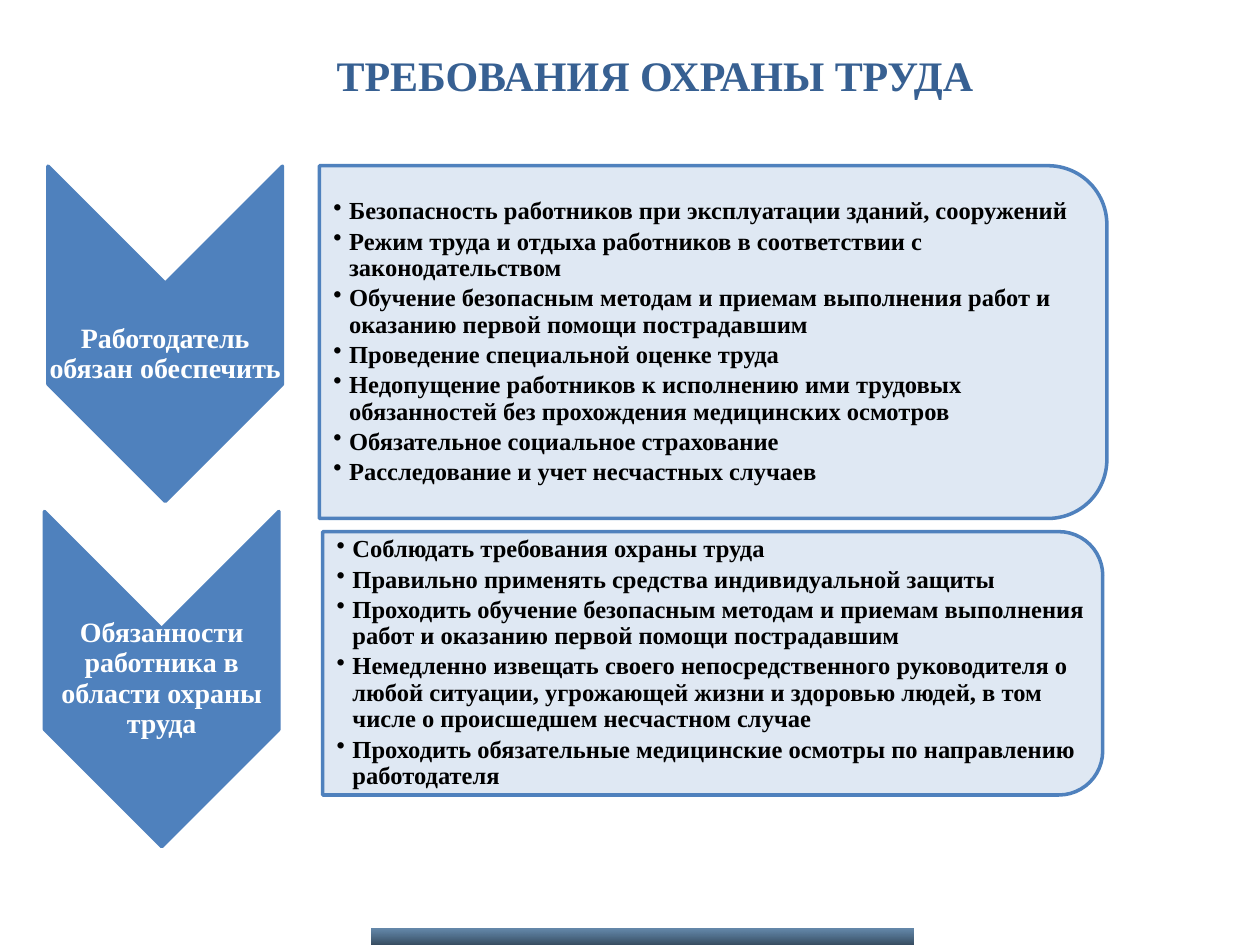
from pptx import Presentation
from pptx.dml.color import RGBColor
from pptx.enum.shapes import MSO_SHAPE
from pptx.enum.text import MSO_ANCHOR, PP_ALIGN
from pptx.oxml import parse_xml
from pptx.oxml.ns import nsdecls, qn
from pptx.util import Pt

BLUE = RGBColor(0x4F, 0x81, 0xBD)
PALE_BLUE = RGBColor(0xDC, 0xE6, 0xF2)
TITLE_BLUE = RGBColor(0x37, 0x60, 0x92)
BAR_TOP = RGBColor(0x00, 0x3C, 0x73)
BAR_BOTTOM = RGBColor(0x00, 0x1C, 0x35)
WHITE = RGBColor(0xFF, 0xFF, 0xFF)
BLACK = RGBColor(0, 0, 0)
FONT = "Times New Roman"
CORNER = 1 / 6  # corner radius as a share of the panel height
CORNER_INSET = 0.29  # share of the radius that keeps text clear of the curve

# Each section: chevron box, its text shift, label, panel box, panel items
SECTIONS = [
    ((27.4, 95, 134, 191.5), 12, "Работодатель обязан обеспечить",
     (182.5, 94.7, 450, 201.6), [
         "Безопасность работников при эксплуатации зданий, сооружений",
         "Режим труда и отдыха работников в соответствии с законодательством",
         "Обучение безопасным методам и приемам выполнения работ и оказанию первой помощи пострадавшим",
         "Проведение специальной оценке труда",
         "Недопущение работников к исполнению ими трудовых обязанностей без прохождения медицинских осмотров",
         "Обязательное социальное страхование",
         "Расследование и учет несчастных случаев"]),
    ((25.4, 292.3, 134, 191.5), 0, "Обязанности работника в области охраны труда",
     (184.4, 303.8, 445.7, 150.5), [
         "Соблюдать требования охраны труда",
         "Правильно применять средства индивидуальной защиты",
         "Проходить обучение безопасным методам и приемам выполнения работ и оказанию первой помощи пострадавшим",
         "Немедленно извещать своего непосредственного руководителя о любой ситуации, угрожающей жизни и здоровью людей, в том числе о происшедшем несчастном случае",
         "Проходить обязательные медицинские осмотры по направлению работодателя"]),
]


def set_alpha(color_element, percent):
    color_element.append(parse_xml(
        f'<a:alpha {nsdecls("a")} val="{percent * 1000}"/>'))


def add_turned_shape(page, kind, box, fill):
    """Add a shape turned a quarter clockwise so that it covers the box."""
    left, top, width, height = box
    shift = (width - height) / 2
    shape = page.shapes.add_shape(
        kind, Pt(left + shift), Pt(top - shift), Pt(height), Pt(width))
    shape.rotation = 90
    shape.shadow.inherit = False
    shape.fill.solid()
    shape.fill.fore_color.rgb = fill
    shape.line.color.rgb = BLUE
    shape.line.width = Pt(2)
    return shape


def add_text(page, box, lines, size, color, margin_left=0.8, align=None,
             spacing=None, after=None, bullets=False):
    frame = page.shapes.add_textbox(*map(Pt, box)).text_frame
    frame.word_wrap = True
    frame.vertical_anchor = MSO_ANCHOR.MIDDLE
    frame.margin_left = Pt(margin_left)
    frame.margin_top = frame.margin_right = frame.margin_bottom = Pt(0.8)
    frame.text = "\n".join(lines)
    for para in frame.paragraphs:
        para.alignment = align
        para.line_spacing = spacing
        if after:
            para.space_after = Pt(after)
        if bullets:
            properties = para._p.get_or_add_pPr()
            properties.set("marL", str(Pt(9)))
            properties.set("indent", str(-Pt(9)))
            properties.append(parse_xml(f'<a:buChar {nsdecls("a")} char="•"/>'))
        for run in para.runs:
            run.font.name = FONT
            run.font.size = Pt(size)
            run.font.bold = True
            run.font.color.rgb = color


def add_chevron(page, box, text_shift, label):
    add_turned_shape(page, MSO_SHAPE.CHEVRON, box, BLUE).adjustments[0] = 0.5
    left, top, width, height = box
    text_box = (left, top + width / 2 + text_shift, width, height - width)
    add_text(page, text_box, [label], 16, WHITE,
             align=PP_ALIGN.CENTER, spacing=0.9, after=5.6)


def add_panel(page, box, items):
    panel = add_turned_shape(page, MSO_SHAPE.ROUND_2_SAME_RECTANGLE, box, PALE_BLUE)
    panel.adjustments[0] = CORNER
    set_alpha(panel._element.spPr.find(qn("a:solidFill"))[0], 90)
    left, top, width, height = box
    inset = height * CORNER * CORNER_INSET
    text_box = (left, top + inset, width - inset, height - 2 * inset)
    add_text(page, text_box, items, 14, BLACK, margin_left=8,
             spacing=0.9, after=2.1, bullets=True)


def add_bottom_bar(page, box):
    bar = page.shapes.add_shape(MSO_SHAPE.RECTANGLE, *map(Pt, box))
    bar.shadow.inherit = False
    bar.line.fill.background()
    bar.fill.gradient()
    bar.fill.gradient_angle = 270
    for stop, color in zip(bar.fill.gradient_stops, (BAR_TOP, BAR_BOTTOM)):
        stop.color.rgb = color
    colors = bar._element.spPr.find(qn("a:gradFill")).iter(qn("a:srgbClr"))
    for color_element, percent in zip(list(colors), (60, 80)):
        set_alpha(color_element, percent)


def main():
    deck = Presentation()
    deck.slide_width, deck.slide_height = Pt(720), Pt(540)
    page = deck.slides.add_slide(deck.slide_layouts[6])
    for chevron_box, text_shift, label, panel_box, items in SECTIONS:
        add_chevron(page, chevron_box, text_shift, label)
        add_panel(page, panel_box, items)
    add_text(page, (105, 15, 538.5, 55.5), ["ТРЕБОВАНИЯ ОХРАНЫ ТРУДА"],
             24, TITLE_BLUE, align=PP_ALIGN.CENTER)
    add_bottom_bar(page, (212.5, 530.5, 309.6, 9.5))
    deck.save("out.pptx")


if __name__ == "__main__":
    main()
